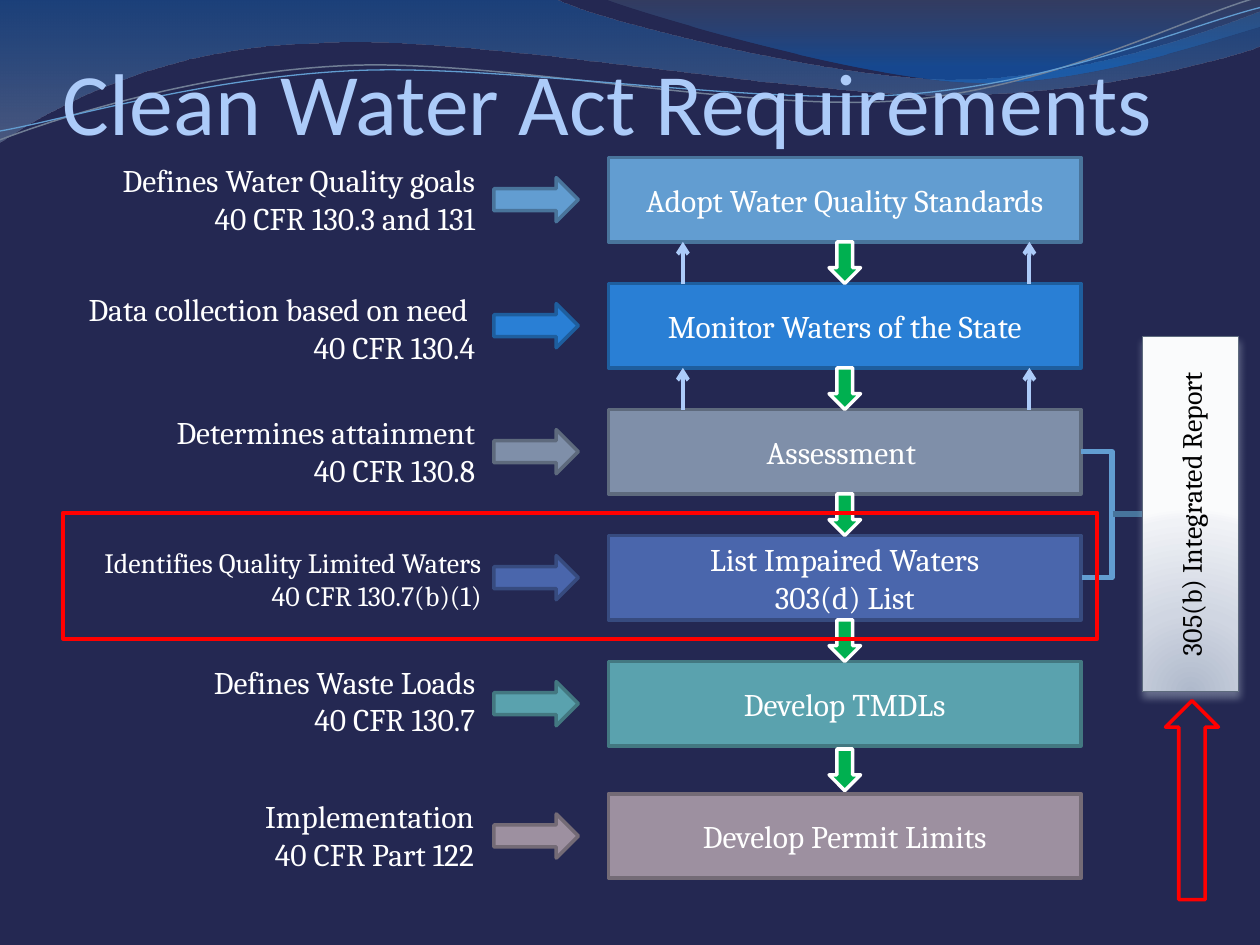
from dataclasses import dataclass

from lxml import etree
from pptx import Presentation
from pptx.dml.color import RGBColor
from pptx.enum.shapes import MSO_CONNECTOR, MSO_SHAPE
from pptx.enum.text import MSO_ANCHOR, PP_ALIGN
from pptx.oxml.ns import qn
from pptx.util import Inches, Pt

RECT, DOWN, RIGHT = MSO_SHAPE.RECTANGLE, MSO_SHAPE.DOWN_ARROW, MSO_SHAPE.RIGHT_ARROW
STRAIGHT, ELBOW = MSO_CONNECTOR.STRAIGHT, MSO_CONNECTOR.ELBOW
TOP, MIDDLE = MSO_ANCHOR.TOP, MSO_ANCHOR.MIDDLE
ALIGN_LEFT, ALIGN_CENTER, ALIGN_RIGHT = PP_ALIGN.LEFT, PP_ALIGN.CENTER, PP_ALIGN.RIGHT


@dataclass(frozen=True)
class Theme:
    background: str = "242852"
    title: str = "ACCBF9"
    text: str = "FFFFFF"
    dark_text: str = "000000"
    flow: str = "00B050"
    highlight: str = "FF0000"
    bracket: str = "629DD1"
    stem: str = "47749C"
    report_line: str = "5D6A7D"
    shadow: str = "AFB9CB"
    heading_font: str = "Calibri"
    body_font: str = "Cambria"
    title_size: int = 50
    body_size: int = 18
    small_size: int = 16


THEME = Theme()
ROW_TOP, ROW_PITCH, BOX_H = 1.25, 1, 0.67
BOX_X, BOX_W = 4.83, 3.75
ARROW_X, ARROW_W, ARROW_H = 3.92, 0.67, 0.35
FLOW_W, FLOW_H = 0.25, 0.33
REPORT_X, REPORT_Y, REPORT_W, REPORT_H = 9.45, 4.08, 2.82, 0.76
BRACKET_X = 8.83

STEPS = [
    ("Adopt Water Quality Standards", "Defines Water Quality goals\n40 CFR 130.3 and 131",
     "629DD1", "49749B", (0.63, 1.23, 3.24, 0.71), THEME.body_size),
    ("Monitor Waters of the State", "Data collection based on need \n40 CFR 130.4",
     "297FD5", "1E5E9E", (0, 2.25, 3.87, 0.71), THEME.body_size),
    ("Assessment ", "Determines attainment\n40 CFR 130.8",
     "7F8FA9", "5E6A7D", (0, 3.23, 3.87, 0.71), THEME.body_size),
    ("List Impaired Waters\n303(d) List", "Identifies Quality Limited Waters\n40 CFR 130.7(b)(1)",
     "4A66AC", "374B7F", (0, 4.28, 3.92, 0.64), THEME.small_size),
    ("Develop TMDLs", "Defines Waste Loads\n40 CFR 130.7",
     "5AA2AE", "437881", (0.45, 5.21, 3.42, 0.71), THEME.body_size),
    ("Develop Permit Limits", "Implementation\n40 CFR Part 122",
     "9D90A0", "746B76", (0.44, 6.28, 3.42, 0.71), THEME.body_size),
]

WAVES = [
    ([(0, 0), (4.4, -0.01), (4.76, 0.17, 6.64, 0.63, 7.58, 0.63), (8.53, 0.63, 9.58, 0.26, 10, 0.09),
      (10.01, 0.36), (9.83, 0.44, 8.7, 0.76, 7.46, 0.75), (6.22, 0.75, 3.82, 0.28, 2.57, 0.34),
      (1.29, 0.36, 0.46, 0.83, -0.01, 1.13)], [(0, "125EAA", 45), (100, "697FA4", 55)]),
    ([(4.79, -0.01), (5.09, 0.11, 6.82, 0.62, 7.69, 0.65), (8.56, 0.69, 9.61, 0.32, 10, 0.21), (10, 0)],
     [(0, "596982", 30), (80, "0670DA", 45)]),
]
RIPPLES = [
    ([(0, 1.11), (0.48, 0.93, 1.58, 0.57, 2.77, 0.52), (3.95, 0.47, 5.93, 0.89, 7.13, 0.8),
      (8.33, 0.71, 9.38, 0.15, 9.98, -0.02)], "707E95", 0.85),
    ([(0, 1.04), (0.47, 0.96, 1.64, 0.61, 2.83, 0.56), (4.03, 0.51, 5.97, 0.84, 7.17, 0.75),
      (8.36, 0.67, 9.41, 0.21, 10, 0.06)], "629DD1", 0.75),
]


def row_y(i):
    return ROW_TOP + i * ROW_PITCH + (0.05 if i == len(STEPS) - 1 else 0)


def add_xml(parent, tag, **attrs):
    return etree.SubElement(parent, qn(tag), {k: str(v) for k, v in attrs.items()})


def add_color(parent, color, opacity):
    clr = add_xml(parent, "a:srgbClr", val=color)
    if opacity < 100:
        add_xml(clr, "a:alpha", val=opacity * 1000)


def set_gradient(s, stops, center=None):
    s.fill.gradient()
    grad = s._element.spPr.find(qn("a:gradFill"))
    for child in list(grad):
        grad.remove(child)
    grad.set("rotWithShape", "0" if center else "1")
    gs_list = add_xml(grad, "a:gsLst")
    for pos, color, opacity in stops:
        add_color(add_xml(gs_list, "a:gs", pos=pos * 1000), color, opacity)
    if center:
        shade = add_xml(grad, "a:path", path="circle")
        add_xml(shade, "a:fillToRect", **{k: v * 1000 for k, v in zip("ltrb", center)})
    else:
        add_xml(grad, "a:lin", ang=90 * 60000, scaled=1)


def style(s, fill=None, line=None, width=2):
    s.shadow.inherit = False
    for part, color in ((s.fill, fill), (s.line.fill, line)):
        if color:
            part.solid()
            part.fore_color.rgb = RGBColor.from_string(color)
        else:
            part.background()
    if line:
        s.line.width = Pt(width)


def write(s, text, size, color=THEME.text, align=ALIGN_CENTER, anchor=MIDDLE, font=THEME.body_font):
    tf = s.text_frame
    tf.word_wrap = True
    tf.vertical_anchor = anchor
    for i, line in enumerate(text.split("\n")):
        p = tf.paragraphs[0] if i == 0 else tf.add_paragraph()
        p.add_run().text = line
        p.alignment = align
        p.font.name, p.font.size = font, Pt(size)
        p.font.color.rgb = RGBColor.from_string(color)
    return tf


def add_shape(slide, kind, x, y, w, h, fill=None, line=None, width=2):
    s = slide.shapes.add_shape(kind, Inches(x), Inches(y), Inches(w), Inches(h))
    style(s, fill, line, width)
    return s


def add_label(slide, text, x, y, w, h, size, **options):
    s = slide.shapes.add_textbox(Inches(x), Inches(y), Inches(w), Inches(h))
    return write(s, text, size, anchor=TOP, **options)


def add_line(slide, x1, y1, x2, y2, color, width, kind=STRAIGHT, arrow=False):
    s = slide.shapes.add_connector(kind, Inches(x1), Inches(y1), Inches(x2), Inches(y2))
    s.line.color.rgb = RGBColor.from_string(color)
    s.line.width = Pt(width)
    if arrow:
        add_xml(s.line._get_or_add_ln(), "a:tailEnd", type="arrow")
    add_xml(s._element.spPr, "a:effectLst")
    return s


def add_curve(slide, outline, close, line=None, width=1):
    nodes = [(Inches(part[-2]), Inches(part[-1])) for part in outline]
    builder = slide.shapes.build_freeform(*nodes[0])
    builder.add_line_segments(nodes[1:], close=close)
    s = builder.convert_to_shape()
    segments = list(s._element.spPr.iter(qn("a:lnTo")))
    for part, segment in zip(outline[1:], segments):
        if len(part) == 6:
            curve = etree.Element(qn("a:cubicBezTo"))
            for x, y in zip(part[::2], part[1::2]):
                add_xml(curve, "a:pt", x=Inches(x) - s.left, y=Inches(y) - s.top)
            segment.getparent().replace(segment, curve)
    style(s, line=line, width=width)
    return s


def add_step(slide, i):
    name, note, fill, line, note_area, note_size = STEPS[i]
    y = row_y(i)
    write(add_shape(slide, RECT, BOX_X, y, BOX_W, BOX_H, fill, line), name, THEME.body_size)
    add_shape(slide, RIGHT, ARROW_X, y + (BOX_H - ARROW_H) / 2, ARROW_W, ARROW_H, fill, line)
    add_label(slide, note, *note_area, note_size, align=ALIGN_RIGHT)
    if i:
        gap_middle = (row_y(i - 1) + BOX_H + y) / 2
        add_shape(slide, DOWN, BOX_X + (BOX_W - FLOW_W) / 2, gap_middle - FLOW_H / 2, FLOW_W, FLOW_H,
                  THEME.flow, THEME.text)
    if i in (1, 2):
        for x in (5.42, 8.17):
            add_line(slide, x, y, x, y - FLOW_H, THEME.title, 2.25, arrow=True)


def add_report(slide):
    right, overlap = BOX_X + BOX_W, 0.01
    bracket = add_line(slide, right, row_y(2) + BOX_H / 2, right + overlap, row_y(3) + BOX_H / 2,
                       THEME.bracket, 3, ELBOW)
    guides = bracket._element.spPr.find(qn("a:prstGeom")).find(qn("a:avLst"))
    add_xml(guides, "a:gd", name="adj1", fmla=f"val {round((BRACKET_X - right) / overlap * 100000)}")
    stem = add_line(slide, BRACKET_X, REPORT_Y, REPORT_X - REPORT_H / 2, REPORT_Y, THEME.stem, 3)

    s = add_shape(slide, RECT, REPORT_X - REPORT_W / 2, REPORT_Y - REPORT_H / 2, REPORT_W, REPORT_H,
                  line=THEME.report_line, width=0.75)
    s.rotation = 270
    set_gradient(s, [(0, "AFB9CB", 100), (43, "D0D6E2", 100), (93, "F0F2F6", 100), (100, "FAFBFC", 100)],
                 center=(50, 130, 50, -30))
    shadow = add_xml(s._element.spPr.find(qn("a:effectLst")), "a:outerShdw", blurRad=Pt(4.5),
                     dist=Pt(3), dir=90 * 60000, rotWithShape=0)
    add_color(shadow, THEME.shadow, 48)
    write(s, "305(b) Integrated Report", THEME.small_size, THEME.dark_text)
    stem.end_connect(s, 0)
    stem.end_x, stem.end_y = Inches(REPORT_X - REPORT_H / 2), Inches(REPORT_Y)


def main():
    prs = Presentation()
    prs.slide_width, prs.slide_height = Inches(10), Inches(7.5)
    slide = prs.slides.add_slide(prs.slide_layouts[6])
    slide.background.fill.solid()
    slide.background.fill.fore_color.rgb = RGBColor.from_string(THEME.background)
    for outline, stops in WAVES:
        set_gradient(add_curve(slide, outline, True), stops)
    for outline, color, width in RIPPLES:
        add_curve(slide, outline, False, color, width)
    tf = add_label(slide, "Clean Water Act Requirements", 0.5, 0.33, 9, 1.08, THEME.title_size,
                   color=THEME.title, align=ALIGN_LEFT, font=THEME.heading_font)
    tf.margin_left = tf.margin_right = tf.margin_bottom = 0
    for i in range(len(STEPS)):
        add_step(slide, i)
    add_report(slide)
    add_shape(slide, RECT, 0.5, 4.07, 8.21, 1, line=THEME.highlight, width=2.25)
    add_shape(slide, DOWN, 9.25, 5.56, 0.42, 1.58, line=THEME.highlight).rotation = 180
    prs.save("out.pptx")


if __name__ == "__main__":
    main()
